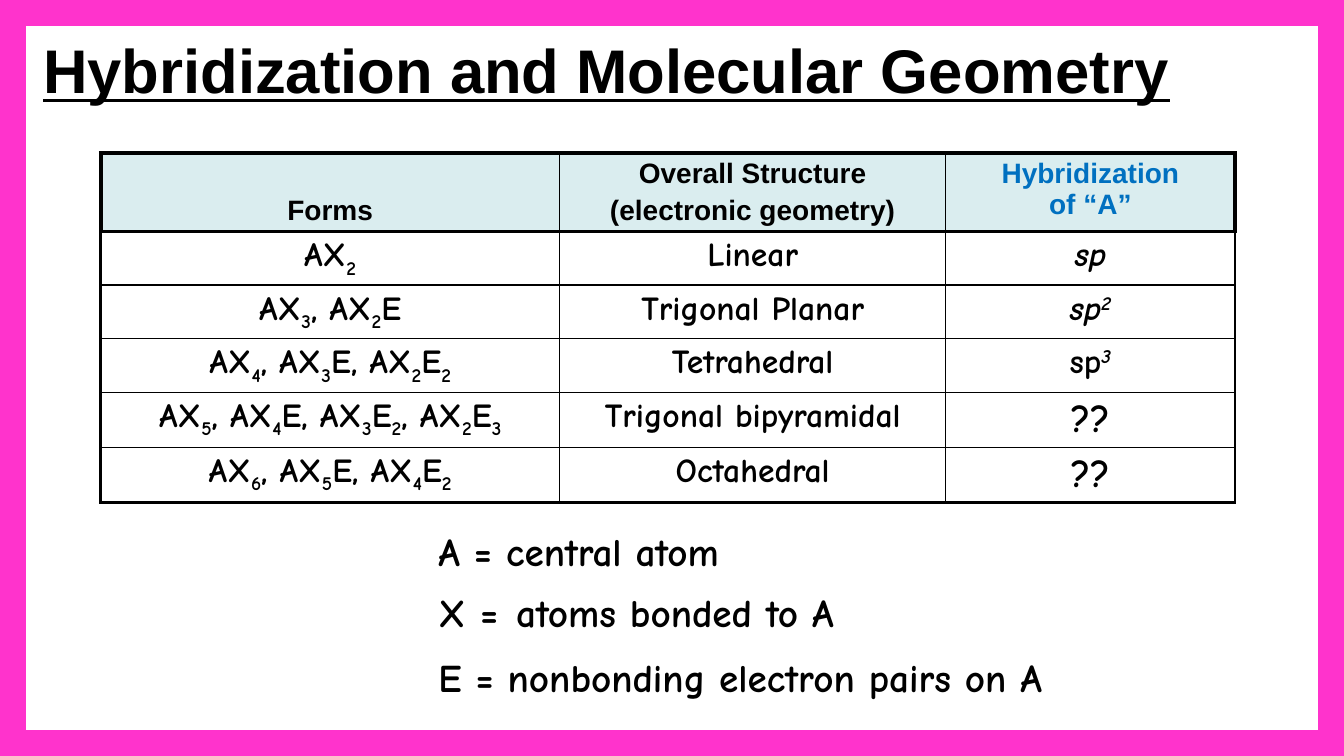
import itertools
from dataclasses import dataclass

import pptx
import pptx.dml.color
import pptx.enum.shapes
import pptx.enum.text
import pptx.util
from lxml import etree
from pptx.util import Inches, Pt

ANCHOR = pptx.enum.text.MSO_ANCHOR
FIT = pptx.enum.text.MSO_AUTO_SIZE
NS = "http://schemas.openxmlformats.org/drawingml/2006/main"


@dataclass(frozen=True)
class Theme:
    ink: str = "000000"
    paper: str = "FFFFFF"
    head: str = "DAEDEF"
    blue: str = "0070C0"
    pink: str = "FF33CC"
    sans: str = "Arial"
    comic: str = "Comic Neue"
    title: int = 44
    space: int = 36
    note: int = 28
    body: int = 24
    label: int = 20
    thick: float = 3
    medium: float = 2.25
    thin: float = 1


THEME = Theme()
WIDTHS = (4.55, 3.83, 2.87)
HEADS = (
    (("Forms",), THEME.ink),
    (("Overall Structure", "(electronic geometry)"), THEME.ink),
    (("Hybridization\vof “A”",), THEME.blue),
)
ROWS = (
    ("AX2", "Linear", "sp"),
    ("AX3, AX2E", "Trigonal Planar", "sp2"),
    ("AX4, AX3E, AX2E2", "Tetrahedral", "sp3"),
    ("AX5, AX4E, AX3E2, AX2E3", "Trigonal bipyramidal", "??"),
    ("AX6, AX5E, AX4E2", "Octahedral", "??"),
)
NOTES = (
    (("A = central atom",), 5.18, 3.45, 0.57),
    (("X =", " ", "atoms bonded to A"), 5.68, 4.69, 0.7),
    (("E = nonbonding electron pairs on A",), 6.43, 6.81, 0.57),
)


def rgb(code):
    return pptx.dml.color.RGBColor.from_string(code)


def style(font, size, name, color=THEME.ink):
    font.size = Pt(size)
    font.name = name
    font.bold = True
    font.color.rgb = rgb(color)


def center(para, size):
    para.alignment = pptx.enum.text.PP_ALIGN.CENTER
    para.space_before = Pt(size * 0.2)


def border(cell, row, col):
    last = len(ROWS)
    side = THEME.medium if row else THEME.thick
    edges = {
        "lnL": side if col == 0 else THEME.thin,
        "lnR": side if col == len(WIDTHS) - 1 else THEME.thin,
        "lnT": THEME.thick if row < 2 else THEME.thin,
        "lnB": THEME.thick if row == 0 else THEME.medium if row == last else THEME.thin,
    }
    props = cell._tc.get_or_add_tcPr()
    for tag, width in edges.items():
        line = etree.SubElement(props, f"{{{NS}}}{tag}", w=str(Pt(width)))
        fill = etree.SubElement(line, f"{{{NS}}}solidFill")
        etree.SubElement(fill, f"{{{NS}}}srgbClr", val=THEME.ink)


def paint(cell, color):
    cell.fill.solid()
    cell.fill.fore_color.rgb = rgb(color)


def add_head(cell, lines, color):
    paint(cell, THEME.head)
    if len(lines) == 1 and "\v" not in lines[0]:
        cell.vertical_anchor = ANCHOR.BOTTOM
    frame = cell.text_frame
    frame.text = "\n".join(lines)
    for para in frame.paragraphs:
        center(para, THEME.label)
        style(para.font, THEME.label, THEME.sans, color)


def add_term(cell, text, shift):
    paint(cell, THEME.paper)
    size = THEME.note if text == "??" else THEME.body
    para = cell.text_frame.paragraphs[0]
    center(para, size)
    style(para.font, size, THEME.comic)
    for digit, group in itertools.groupby(text, str.isdigit):
        run = para.add_run()
        run.text = "".join(group)
        if digit:
            run._r.get_or_add_rPr().set("baseline", str(shift))
        if text in ("sp", "sp2") or (text == "sp3" and digit):
            run.font.italic = True


def add_grid(slide):
    shape = slide.shapes.add_table(
        len(ROWS) + 1, len(WIDTHS), Inches(1), Inches(1.52), Inches(11.25), Inches(3.47)
    )
    table = shape.table
    table.first_row = False
    table.horz_banding = False
    for column, width in zip(table.columns, WIDTHS):
        column.width = Inches(width)
    for index, row in enumerate(table.rows):
        row.height = Inches(0.49 if index else 0.42)
        for col, cell in enumerate(row.cells):
            border(cell, index, col)
            if index == 0:
                add_head(cell, *HEADS[col])
            else:
                add_term(cell, ROWS[index - 1][col], 30000 if col == 2 else -25000)


def add_box(slide, parts, left, top, width, height, size, name):
    box = slide.shapes.add_textbox(
        Inches(left), Inches(top), Inches(width), Inches(height)
    )
    para = box.text_frame.paragraphs[0]
    style(para.font, size, name)
    for part in parts:
        run = para.add_run()
        run.text = part
        if part == " ":
            run.font.size = Pt(THEME.space)
    return box.text_frame


def add_note(slide, parts, top, width, height):
    frame = add_box(slide, parts, 4.25, top, width, height, THEME.note, THEME.comic)
    frame.word_wrap = False
    frame.auto_size = FIT.SHAPE_TO_FIT_TEXT


def add_frame(slide, width, height):
    shape = slide.shapes.add_shape(
        pptx.enum.shapes.MSO_SHAPE.FRAME, 0, 0, width, height
    )
    shape.adjustments[0] = 0.032
    shape.shadow.inherit = False
    shape.fill.solid()
    shape.fill.fore_color.rgb = rgb(THEME.pink)
    shape.line.color.rgb = rgb(THEME.pink)
    shape.line.width = Pt(2)


def add_title(slide, text):
    frame = add_box(slide, (text,), 0.33, 0.27, 11.92, 0.83, THEME.title, THEME.sans)
    frame.word_wrap = True
    frame.vertical_anchor = ANCHOR.MIDDLE
    frame.paragraphs[0].font.underline = True


def main():
    deck = pptx.Presentation()
    deck.slide_width = Inches(13.33)
    deck.slide_height = Inches(7.5)
    slide = deck.slides.add_slide(deck.slide_layouts[6])
    add_grid(slide)
    for note in NOTES:
        add_note(slide, *note)
    add_frame(slide, deck.slide_width, deck.slide_height)
    add_title(slide, "Hybridization and Molecular Geometry")
    deck.save("out.pptx")


if __name__ == "__main__":
    main()
